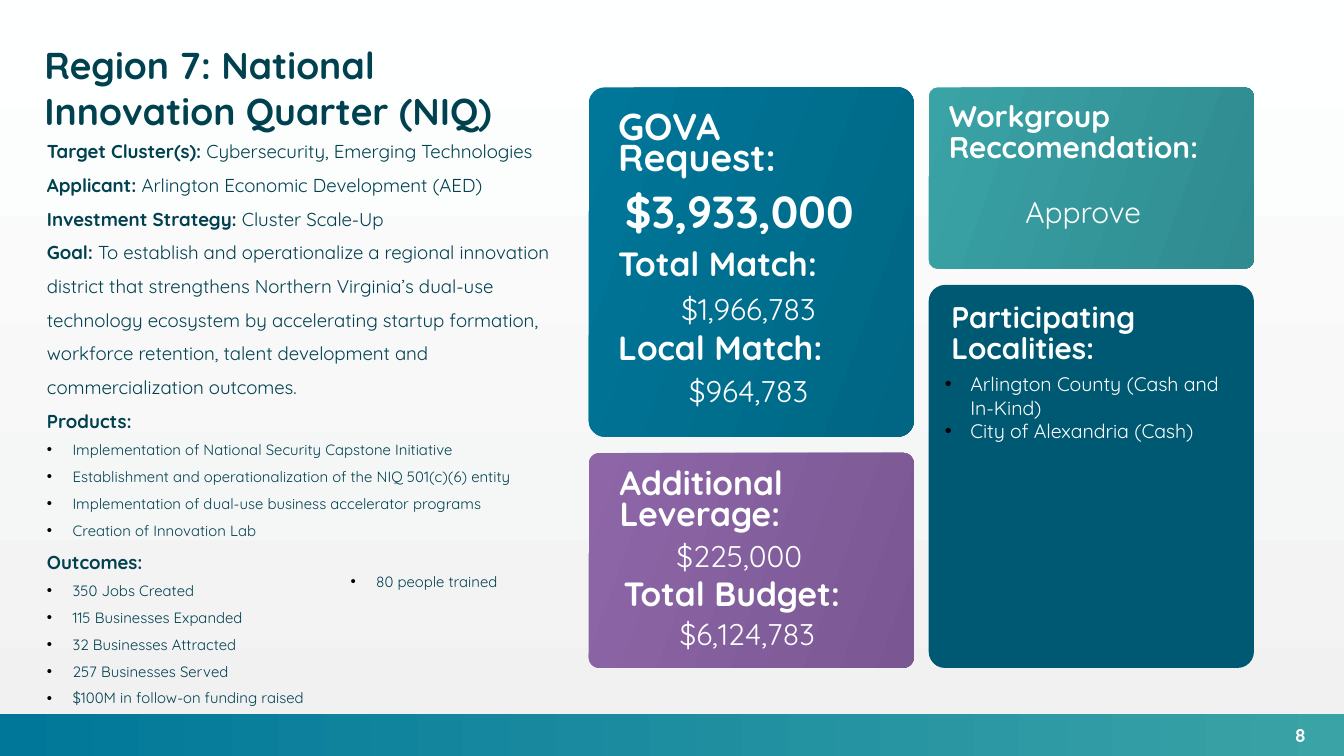
from dataclasses import dataclass

from lxml.etree import SubElement
from pptx import Presentation
from pptx.dml.color import RGBColor
from pptx.enum.shapes import MSO_SHAPE
from pptx.enum.text import MSO_AUTO_SIZE, PP_ALIGN
from pptx.oxml.ns import qn
from pptx.util import Inches, Pt


@dataclass(frozen=True)
class Theme:
    font: str = "Quicksand"
    bullet_font: str = "Arial"
    ink: str = "004150"
    light: str = "FEFFFF"
    bullet: str = "000000"
    page: tuple = ("FEFFFF", "F1F1F1")
    footer: tuple = ("007799", "3AA3A6")
    teal: tuple = ("3AA3A6", "2F8B8F")
    blue: tuple = ("007799", "006684")
    navy: tuple = ("005973",)
    purple: tuple = ("8E66A8", "7A5792")
    title: float = 20
    total: float = 24
    heading: float = 18
    card: float = 16
    locality: float = 10.5
    body: float = 10
    detail: float = 8


THEME = Theme()
SLIDE_WIDTH = Inches(10)
SLIDE_HEIGHT = SLIDE_WIDTH * 9 // 16
HEADING_SPACING = Pt(16.6)
INDENT = 0.19

SUMMARY = [
    ("Target Cluster(s): ", "Cybersecurity, Emerging Technologies"),
    ("Applicant: ", "Arlington Economic Development (AED)"),
    ("Investment Strategy: ", "Cluster Scale-Up"),
    ("Goal: ", "To establish and operationalize a regional innovation district that "
               "strengthens Northern Virginia’s dual-use technology ecosystem by "
               "accelerating startup formation, workforce retention, talent development "
               "and commercialization outcomes."),
]
LISTS = {
    "Products:": [
        "Implementation of National Security Capstone Initiative",
        "Establishment and operationalization of the NIQ 501(c)(6) entity",
        "Implementation of dual-use business accelerator programs",
        "Creation of Innovation Lab",
    ],
    "Outcomes:": [
        "350 Jobs Created",
        "115 Businesses Expanded",
        "32 Businesses Attracted",
        "257 Businesses Served",
        "$100M in follow-on funding raised",
    ],
}
LOCALITIES = ["Arlington County (Cash and In-Kind)", "City of Alexandria (Cash)"]

CARDS = [
    ((6.91, 0.65, 2.42, 1.35), THEME.teal),
    ((4.38, 0.65, 2.42, 2.6), THEME.blue),
    ((6.91, 2.12, 2.42, 2.85), THEME.navy),
    ((4.38, 3.37, 2.42, 1.6), THEME.purple),
]
HEADINGS = [
    ("GOVA Request:", (4.6, 0.87, 1.52, 0.48), THEME.title),
    ("Total Match:", (4.6, 1.88, 1.97, 0.24), THEME.heading),
    ("Local Match:", (4.6, 2.5, 1.97, 0.24), THEME.heading),
    ("Additional Leverage:", (4.61, 3.51, 1.52, 0.48), THEME.heading),
    ("Total Budget:", (4.64, 4.33, 1.97, 0.24), THEME.heading),
    ("Workgroup Reccomendation:", (7.06, 0.76, 2.13, 0.48), THEME.card),
    ("Participating Localities:", (7.08, 2.26, 1.97, 0.48), THEME.card),
]
VALUES = [
    ("$1,966,783", 4.61, 2.16),
    ("$964,783", 4.61, 2.77),
    ("$225,000", 4.54, 4),
    ("$6,124,783", 4.6, 4.58),
    ("Approve", 7.1, 1.44),
]


def apply_format(target, values):
    for name, value in values.items():
        setattr(target, name, value)


def paint(fill, colors, angle=0):
    if len(colors) == 1:
        fill.solid()
        fill.fore_color.rgb = RGBColor.from_string(colors[0])
        return
    fill.gradient()
    fill.gradient_angle = -angle % 360
    for stop, color, position in zip(fill.gradient_stops, colors, (0, 1)):
        stop.color.rgb = RGBColor.from_string(color)
        stop.position = position


def add_panel(slide, kind, box, colors, angle=0):
    panel = slide.shapes.add_shape(kind, *map(Inches, box))
    panel.shadow.inherit = False
    panel.line.fill.background()
    paint(panel.fill, colors, angle)
    return panel


def add_frame(slide, box, inset=True):
    frame = slide.shapes.add_textbox(*map(Inches, box)).text_frame
    apply_format(frame, {"word_wrap": True, "auto_size": MSO_AUTO_SIZE.SHAPE_TO_FIT_TEXT})
    if not inset:
        sides = ("left", "top", "right", "bottom")
        apply_format(frame, {f"margin_{side}": 0 for side in sides})
    return frame


def add_bullet(paragraph):
    properties = paragraph._p.get_or_add_pPr()
    properties.set("marL", str(Inches(INDENT)))
    properties.set("indent", str(-Inches(INDENT)))
    color = SubElement(properties, qn("a:buClr"))
    SubElement(color, qn("a:srgbClr"), val=THEME.bullet)
    SubElement(properties, qn("a:buFont"), typeface=THEME.bullet_font)
    SubElement(properties, qn("a:buChar"), char="•")


def add_paragraph(frame, runs, size, color, bulleted=False, **layout):
    first = frame.paragraphs[0]
    paragraph = frame.add_paragraph() if first.runs else first
    if bulleted:
        add_bullet(paragraph)
    apply_format(paragraph, layout)
    for text, bold in runs:
        run = paragraph.add_run()
        run.text = text
        apply_format(run.font, {"name": THEME.font, "size": Pt(size), "bold": bold})
        run.font.color.rgb = RGBColor.from_string(color)


def add_label(slide, text, box, size, color=THEME.light, bold=False, inset=False, **layout):
    add_paragraph(add_frame(slide, box, inset), [(text, bold)], size, color, **layout)


def add_summary(slide):
    summary = add_frame(slide, (0.35, 0.96, 3.76, 4.32), inset=False)
    spacing = {"line_spacing": 1.5}
    for label, detail in SUMMARY:
        add_paragraph(summary, [(label, True), (detail, False)],
                      THEME.body, THEME.ink, **spacing)
    for label, items in LISTS.items():
        add_paragraph(summary, [(label, True)], THEME.body, THEME.ink, **spacing)
        for item in items:
            add_paragraph(summary, [(item, False)], THEME.detail, THEME.ink,
                          bulleted=True, **spacing)
    add_label(slide, "80 people trained", (2.51, 4.21, 1.62, 0.24), THEME.detail,
              THEME.ink, inset=True, bulleted=True)


def add_cards(slide):
    for box, colors in CARDS:
        card = add_panel(slide, MSO_SHAPE.ROUNDED_RECTANGLE, box, colors, 20)
        card.adjustments[0] = 0.05
    for text, box, size in HEADINGS:
        add_label(slide, text, box, size, bold=True, line_spacing=HEADING_SPACING)
    for text, left, top in VALUES:
        add_label(slide, text, (left, top, 1.92, 0.27), THEME.card,
                  alignment=PP_ALIGN.CENTER)
    add_label(slide, "$3,933,000", (4.54, 1.37, 1.92, 0.4), THEME.total,
              bold=True, alignment=PP_ALIGN.CENTER)
    localities = add_frame(slide, (7.03, 2.77, 2.16, 0.53), inset=False)
    for locality in LOCALITIES:
        add_paragraph(localities, [(locality, False)], THEME.locality, THEME.light,
                      bulleted=True)


def add_footer(slide):
    add_panel(slide, MSO_SHAPE.RECTANGLE, (0, 5.31, 10, 0.32), THEME.footer)
    add_label(slide, "8", (9.46, 5.34, 0.43, 0.27), THEME.body, bold=True,
              inset=True, alignment=PP_ALIGN.CENTER)


def main():
    deck = Presentation()
    apply_format(deck, {"slide_width": SLIDE_WIDTH, "slide_height": SLIDE_HEIGHT})
    slide = deck.slides.add_slide(deck.slide_layouts[6])
    paint(slide.background.fill, THEME.page, 90)
    add_footer(slide)
    add_cards(slide)
    add_label(slide, "Region 7: National Innovation Quarter (NIQ)", (0.33, 0.3, 3.71, 0.7),
              THEME.title, THEME.ink, bold=True, line_spacing=Pt(24.8))
    add_summary(slide)
    deck.save("out.pptx")


if __name__ == "__main__":
    main()
